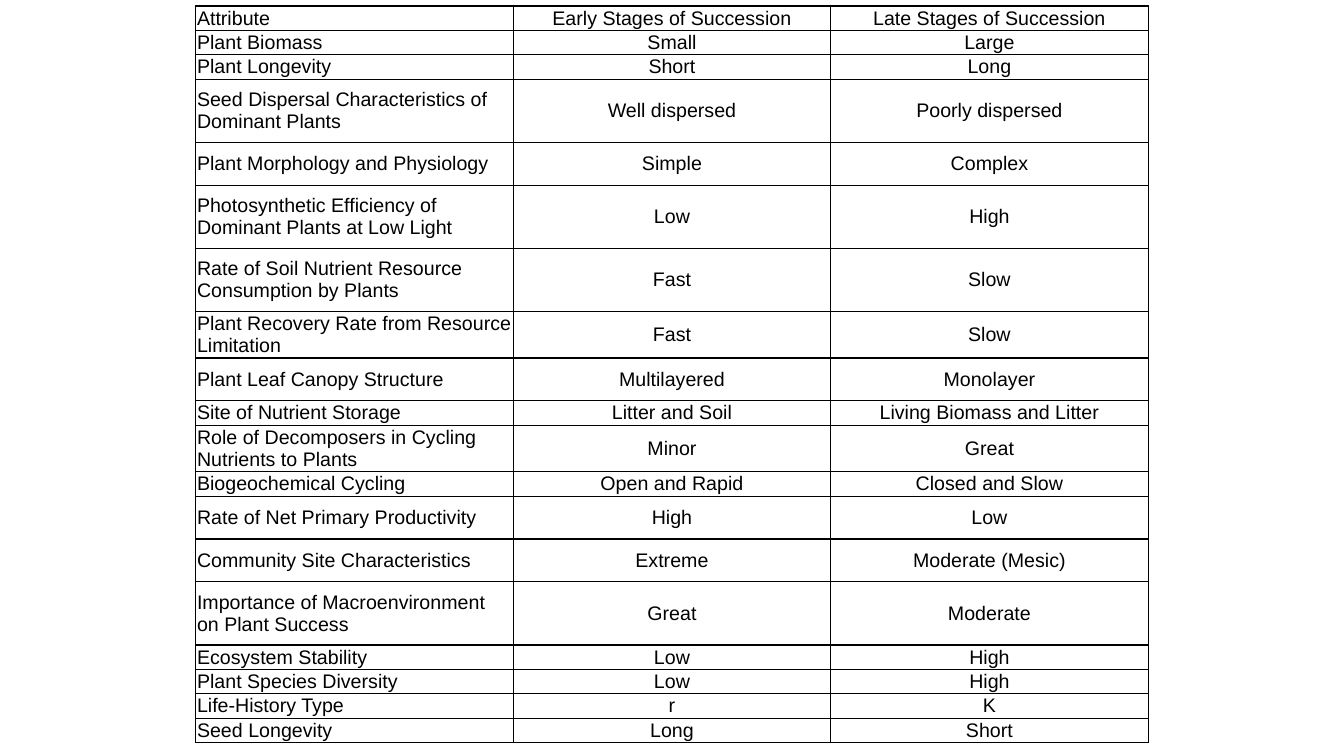
"""Build a slide with a table comparing early and late stages of succession."""
from dataclasses import dataclass

from lxml.etree import SubElement
from pptx import Presentation
from pptx.dml.color import RGBColor
from pptx.enum.text import MSO_ANCHOR, PP_ALIGN
from pptx.oxml.ns import qn
from pptx.table import _Cell
from pptx.util import Cm, Pt

COLORS = {"text": "000000", "border": "000000", "background": "FFFFFF"}
SLIDE_WIDTH, SLIDE_HEIGHT = Cm(33.87), Cm(19.05)
COLUMN_WIDTH = Cm(8)
TABLE_TOP = Cm(0.15)
INSET = Cm(0.03)
SHORT, MEDIUM, TALL = Cm(0.58), Cm(1.08), Cm(1.59)


@dataclass(frozen=True)
class Comparison:
    attribute: str
    early: str
    late: str
    height: int = SHORT


COMPARISONS = [
    Comparison("Attribute", "Early Stages of Succession", "Late Stages of Succession"),
    Comparison("Plant Biomass", "Small", "Large"),
    Comparison("Plant Longevity", "Short", "Long"),
    Comparison("Seed Dispersal Characteristics of Dominant Plants",
               "Well dispersed", "Poorly dispersed", TALL),
    Comparison("Plant Morphology and Physiology", "Simple", "Complex", MEDIUM),
    Comparison("Photosynthetic Efficiency of Dominant Plants at Low Light",
               "Low", "High", TALL),
    Comparison("Rate of Soil Nutrient Resource Consumption by Plants",
               "Fast", "Slow", TALL),
    Comparison("Plant Recovery Rate from Resource Limitation", "Fast", "Slow", MEDIUM),
    Comparison("Plant Leaf Canopy Structure", "Multilayered", "Monolayer", MEDIUM),
    Comparison("Site of Nutrient Storage", "Litter and Soil", "Living Biomass and Litter"),
    Comparison("Role of Decomposers in Cycling Nutrients to Plants",
               "Minor", "Great", MEDIUM),
    Comparison("Biogeochemical Cycling", "Open and Rapid", "Closed and Slow"),
    Comparison("Rate of Net Primary Productivity", "High", "Low", MEDIUM),
    Comparison("Community Site Characteristics", "Extreme", "Moderate (Mesic)", MEDIUM),
    Comparison("Importance of Macroenvironment on Plant Success",
               "Great", "Moderate", TALL),
    Comparison("Ecosystem Stability", "Low", "High"),
    Comparison("Plant Species Diversity", "Low", "High"),
    Comparison("Life-History Type", "r", "K"),
    Comparison("Seed Longevity", "Long", "Short"),
]


def add_borders(cell: _Cell, width: int = Pt(1)) -> None:
    properties = cell._tc.get_or_add_tcPr()
    for side in ("a:lnL", "a:lnR", "a:lnT", "a:lnB"):
        line = SubElement(properties, qn(side), w=str(int(width)))
        fill = SubElement(line, qn("a:solidFill"))
        SubElement(fill, qn("a:srgbClr"), val=COLORS["border"])


def write_text(cell: _Cell, text: str, *, align: PP_ALIGN, size: int = 14,
               font: str = "Arial", color: str = "text") -> None:
    cell.vertical_anchor = MSO_ANCHOR.MIDDLE
    cell.margin_left = cell.margin_right = INSET
    cell.margin_top = cell.margin_bottom = INSET
    paragraph = cell.text_frame.paragraphs[0]
    paragraph.alignment = align
    run = paragraph.add_run()
    run.text = text
    run.font.size = Pt(size)
    run.font.name = font
    run.font.color.rgb = RGBColor.from_string(COLORS[color])


def main() -> None:
    presentation = Presentation()
    presentation.slide_width, presentation.slide_height = SLIDE_WIDTH, SLIDE_HEIGHT
    slide = presentation.slides.add_slide(presentation.slide_layouts[6])
    table_width = 3 * COLUMN_WIDTH
    succession = slide.shapes.add_table(
        len(COMPARISONS), 3, (SLIDE_WIDTH - table_width) // 2, TABLE_TOP,
        table_width, sum(comparison.height for comparison in COMPARISONS)).table
    succession.first_row = succession.horz_banding = False
    for column in succession.columns:
        column.width = COLUMN_WIDTH
    for row, comparison in zip(succession.rows, COMPARISONS):
        row.height = comparison.height
        entries = (comparison.attribute, comparison.early, comparison.late)
        for index, (cell, entry) in enumerate(zip(row.cells, entries)):
            add_borders(cell)
            cell.fill.solid()
            cell.fill.fore_color.rgb = RGBColor.from_string(COLORS["background"])
            write_text(cell, entry, align=PP_ALIGN.CENTER if index else PP_ALIGN.LEFT)
    presentation.save("out.pptx")


if __name__ == "__main__":
    main()
